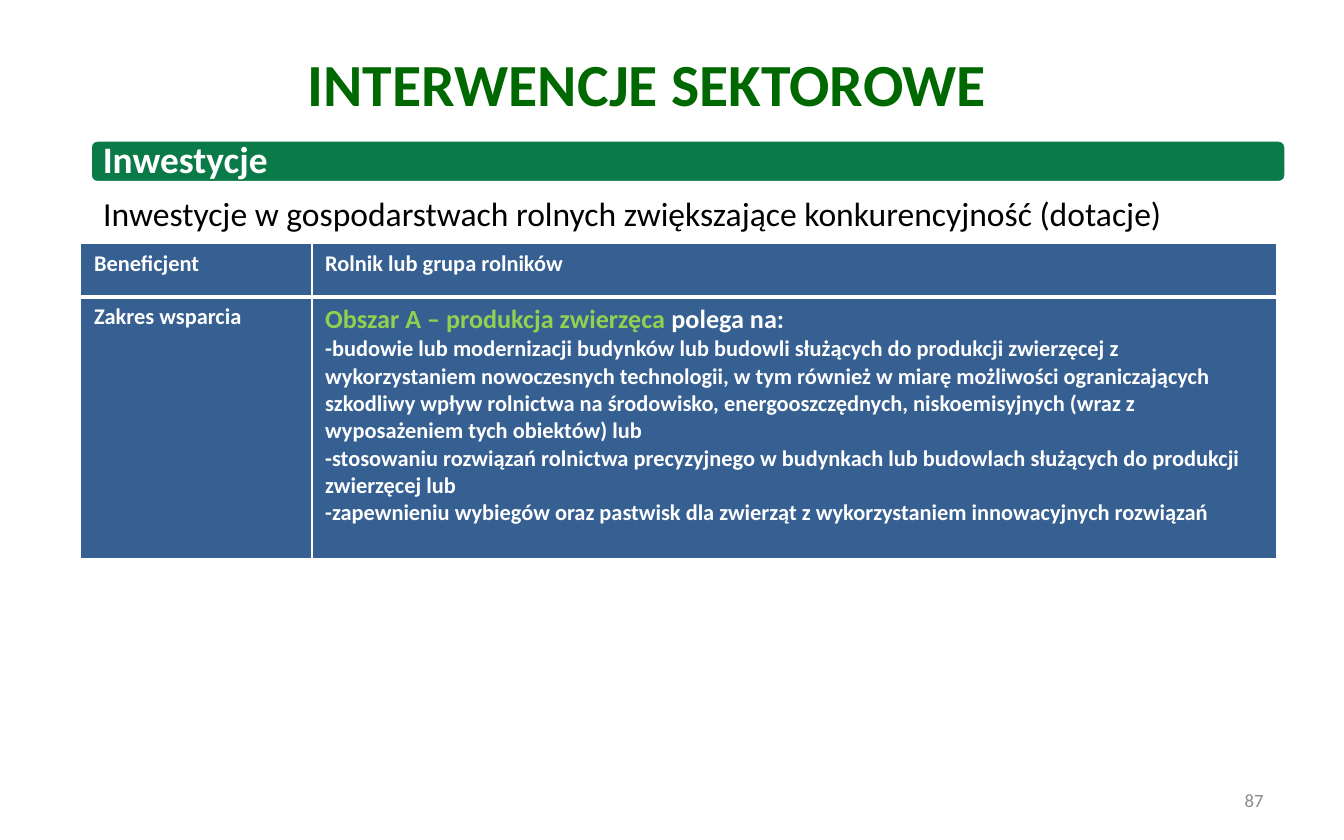
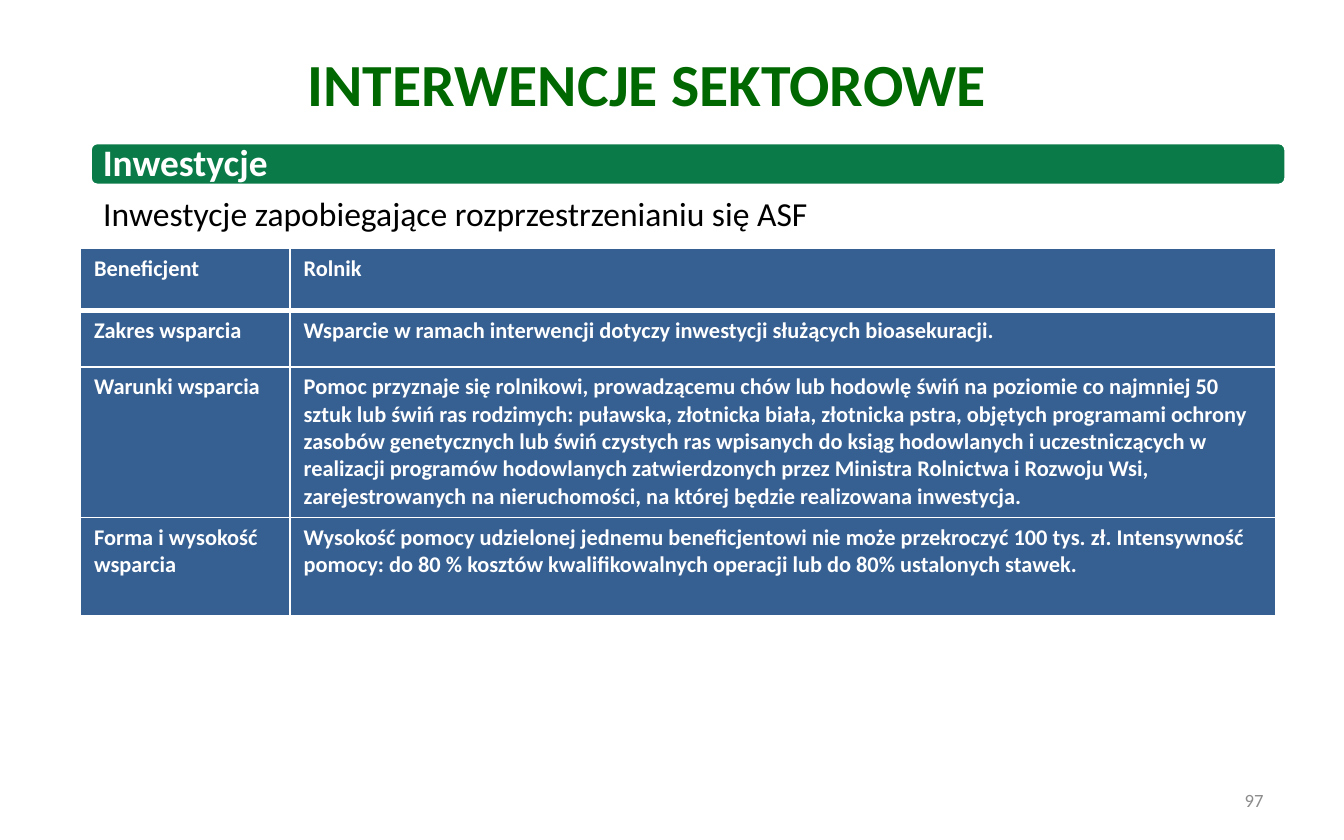
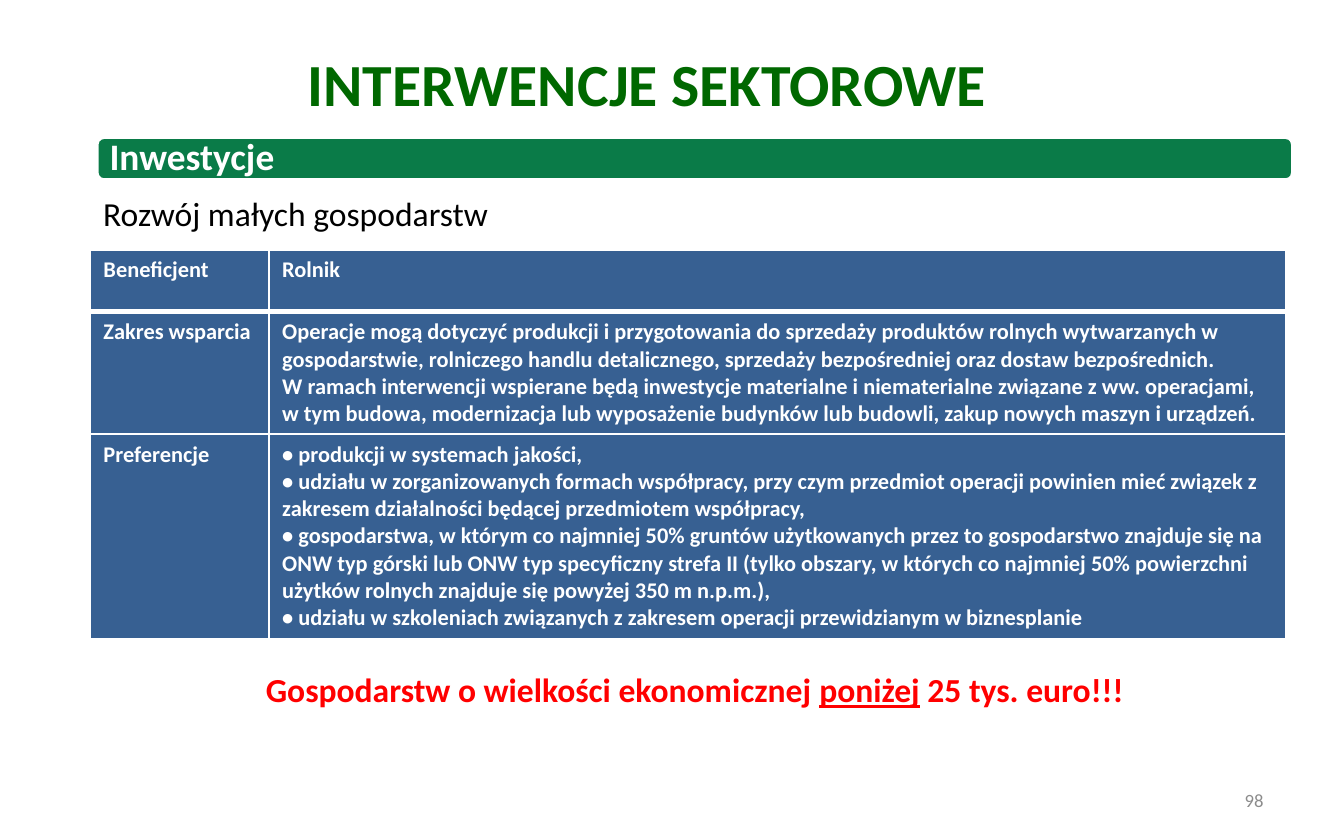
from lxml import etree
from pptx import Presentation
from pptx.dml.color import RGBColor
from pptx.enum.shapes import MSO_SHAPE
from pptx.enum.text import MSO_ANCHOR, MSO_AUTO_SIZE, PP_ALIGN
from pptx.oxml.ns import qn
from pptx.util import Inches, Pt

ROUNDED = MSO_SHAPE.ROUNDED_RECTANGLE
TOP, MIDDLE = MSO_ANCHOR.TOP, MSO_ANCHOR.MIDDLE
LEFT, CENTER, RIGHT = PP_ALIGN.LEFT, PP_ALIGN.CENTER, PP_ALIGN.RIGHT
FIT_SHAPE, NO_FIT = MSO_AUTO_SIZE.SHAPE_TO_FIT_TEXT, MSO_AUTO_SIZE.NONE

# Shared style
FONT = "Calibri"
WHITE, BLACK, RED = "FFFFFF", "000000", "FF0000"
TITLE_GREEN, BAND_GREEN, LIME = "006800", "0A7B48", "92D050"
TABLE_BLUE, NUMBER_GRAY = "376092", "8C8C8C"
TITLE_ONLY_LAYOUT = 5
THIN, THICK = 1, 3


def color(hex_string):
    return RGBColor.from_string(hex_string)


def style_font(font, size=None, fill=None, bold=None, underline=None):
    if size:
        font.size = Pt(size)
    if fill:
        font.color.rgb = color(fill)
    if bold is not None:
        font.bold = bold
    if underline is not None:
        font.underline = underline


def write(frame, paragraphs, size, fill, bold=False, align=LEFT):
    """Each paragraph is a string or a list of (text, run style) pairs."""
    frame.word_wrap = True
    for index, content in enumerate(paragraphs):
        paragraph = frame.paragraphs[0] if index == 0 else frame.add_paragraph()
        if isinstance(content, str):
            paragraph.text = content
        else:
            for text, run_style in content:
                run = paragraph.add_run()
                run.text = text
                style_font(run.font, **run_style)
        paragraph.alignment = align
        paragraph.font.name = FONT
        style_font(paragraph.font, size, fill, bold)


def set_borders(cell, top, bottom):
    properties = cell._tc.get_or_add_tcPr()
    sides = (("a:lnL", THIN), ("a:lnR", THIN), ("a:lnT", top), ("a:lnB", bottom))
    for index, (tag, width) in enumerate(sides):
        line = etree.Element(qn(tag), w=str(Pt(width)))
        solid = etree.SubElement(line, qn("a:solidFill"))
        etree.SubElement(solid, qn("a:srgbClr"), val=WHITE)
        properties.insert(index, line)


class Deck:
    def __init__(self):
        self.presentation = Presentation()
        self.presentation.slide_width = Inches(10)
        self.presentation.slide_height = Inches(6.25)
        self.slide = None

    def start_slide(self, number, subtitle, band_left, band_top):
        layout = self.presentation.slide_layouts[TITLE_ONLY_LAYOUT]
        self.slide = self.presentation.slides.add_slide(layout)
        self.title("INTERWENCJE SEKTOROWE")
        self.band("Inwestycje", band_left, band_top)
        self.text(subtitle, 0.67, 1.39, 8.83, 0.4, 18, BLACK)
        box = self.text(str(number), 7.17, 5.79, 2.33, 0.33, 10, NUMBER_GRAY, align=RIGHT)
        box.text_frame.auto_size = NO_FIT
        box.text_frame.vertical_anchor = MIDDLE

    def title(self, text):
        title = self.slide.shapes.title
        title.left, title.top = Inches(1.88), Inches(0.3)
        title.width, title.height = Inches(5.87), Inches(0.71)
        title.text_frame.auto_size = NO_FIT
        title.text_frame.vertical_anchor = TOP
        write(title.text_frame, [text], 32, TITLE_GREEN, True, CENTER)

    def band(self, text, left, top):
        band = self.slide.shapes.add_shape(
            ROUNDED, Inches(left), Inches(top), Inches(8.9), Inches(0.32))
        band.shadow.inherit = False
        band.fill.solid()
        band.fill.fore_color.rgb = color(BAND_GREEN)
        band.line.color.rgb = color(WHITE)
        band.line.width = Pt(2)
        frame = band.text_frame
        frame.margin_left = frame.margin_right = Inches(0.08)
        frame.margin_top = frame.margin_bottom = 0
        frame.vertical_anchor = MIDDLE
        write(frame, [text], 20, WHITE, True)
        frame.paragraphs[0].line_spacing = 0.9

    def text(self, content, left, top, width, height, size, fill, bold=False, align=LEFT):
        box = self.slide.shapes.add_textbox(
            Inches(left), Inches(top), Inches(width), Inches(height))
        write(box.text_frame, [content], size, fill, bold, align)
        box.text_frame.auto_size = FIT_SHAPE
        return box

    def table(self, left, top, column_widths, row_heights, rows):
        """Each row is a label and the list of paragraphs beside it."""
        table = self.slide.shapes.add_table(
            len(rows), len(column_widths), Inches(left), Inches(top),
            Inches(sum(column_widths)), Inches(sum(row_heights))).table
        table.horz_banding = False
        for column, width in zip(table.columns, column_widths):
            column.width = Inches(width)
        for row_index, (label, paragraphs) in enumerate(rows):
            table.rows[row_index].height = Inches(row_heights[row_index])
            for column_index, content in enumerate(([label], paragraphs)):
                cell = table.cell(row_index, column_index)
                cell.fill.solid()
                cell.fill.fore_color.rgb = color(TABLE_BLUE)
                set_borders(cell, THICK if row_index == 1 else THIN,
                            THICK if row_index == 0 else THIN)
                write(cell.text_frame, content, 12, WHITE, True)


def main():
    deck = Deck()

    # Competitiveness investments
    deck.start_slide(
        87, "Inwestycje w gospodarstwach rolnych zwiększające konkurencyjność (dotacje)",
        0.67, 1.04)
    deck.table(0.6, 1.81, [1.72, 7.18], [0.4, 1.95], [
        ("Beneficjent", ["Rolnik lub grupa rolników"]),
        ("Zakres wsparcia", [
            [("Obszar A – produkcja zwierzęca ", {"size": 14, "fill": LIME}),
             ("polega na:", {"size": 14})],
            "-budowie lub modernizacji budynków lub budowli służących do produkcji "
            "zwierzęcej z wykorzystaniem nowoczesnych technologii, w tym również w miarę "
            "możliwości ograniczających szkodliwy wpływ rolnictwa na środowisko, "
            "energooszczędnych, niskoemisyjnych (wraz z wyposażeniem tych obiektów) lub",
            "-stosowaniu rozwiązań rolnictwa precyzyjnego w budynkach lub budowlach "
            "służących do produkcji zwierzęcej lub",
            "-zapewnieniu wybiegów oraz pastwisk dla zwierząt z wykorzystaniem "
            "innowacyjnych rozwiązań",
        ]),
    ])

    # ASF prevention
    deck.start_slide(97, "Inwestycje zapobiegające rozprzestrzenianiu się ASF", 0.67, 1.06)
    deck.table(0.6, 1.85, [1.56, 7.33], [0.46, 0.42, 1.12, 0.73], [
        ("Beneficjent", ["Rolnik"]),
        ("Zakres wsparcia", [
            "Wsparcie w ramach interwencji dotyczy inwestycji służących bioasekuracji."]),
        ("Warunki wsparcia", [
            "Pomoc przyznaje się rolnikowi, prowadzącemu chów lub hodowlę świń na poziomie "
            "co najmniej 50 sztuk lub świń ras rodzimych: puławska, złotnicka biała, "
            "złotnicka pstra, objętych programami ochrony zasobów genetycznych lub świń "
            "czystych ras wpisanych do ksiąg hodowlanych i uczestniczących w realizacji "
            "programów hodowlanych zatwierdzonych przez Ministra Rolnictwa i Rozwoju Wsi, "
            "zarejestrowanych na nieruchomości, na której będzie realizowana inwestycja."]),
        ("Forma i wysokość wsparcia", [
            "Wysokość pomocy udzielonej jednemu beneficjentowi nie może przekroczyć "
            "100 tys. zł. Intensywność pomocy: do 80 % kosztów kwalifikowalnych operacji "
            "lub do 80% ustalonych stawek."]),
    ])

    # Small farm development
    deck.start_slide(98, "Rozwój małych gospodarstw", 0.72, 1.02)
    deck.table(0.67, 1.86, [1.33, 7.57], [0.46, 0.91, 1.52], [
        ("Beneficjent", ["Rolnik"]),
        ("Zakres wsparcia", [
            "Operacje mogą dotyczyć produkcji i przygotowania do sprzedaży produktów "
            "rolnych wytwarzanych w gospodarstwie, rolniczego handlu detalicznego, "
            "sprzedaży bezpośredniej oraz dostaw bezpośrednich.\n"
            "W ramach interwencji wspierane będą inwestycje materialne i niematerialne "
            "związane z ww. operacjami, w tym budowa, modernizacja lub wyposażenie "
            "budynków lub budowli, zakup nowych maszyn i urządzeń."]),
        ("Preferencje", [
            "• produkcji w systemach jakości,",
            "• udziału w zorganizowanych formach współpracy, przy czym przedmiot operacji "
            "powinien mieć związek z zakresem działalności będącej przedmiotem współpracy,",
            "• gospodarstwa, w którym co najmniej 50% gruntów użytkowanych przez to "
            "gospodarstwo znajduje się na ONW typ górski lub ONW typ specyficzny strefa II "
            "(tylko obszary, w których co najmniej 50% powierzchni użytków rolnych "
            "znajduje się powyżej 350 m n.p.m.),",
            "• udziału w szkoleniach związanych z zakresem operacji przewidzianym "
            "w biznesplanie",
        ]),
    ])
    deck.text([("Gospodarstw o wielkości ekonomicznej ", {}),
               ("poniżej", {"underline": True}),
               (" 25 tys. euro!!!", {})],
              1.88, 4.93, 6.66, 0.4, 18, RED, True)

    deck.presentation.save("out.pptx")


if __name__ == "__main__":
    main()
